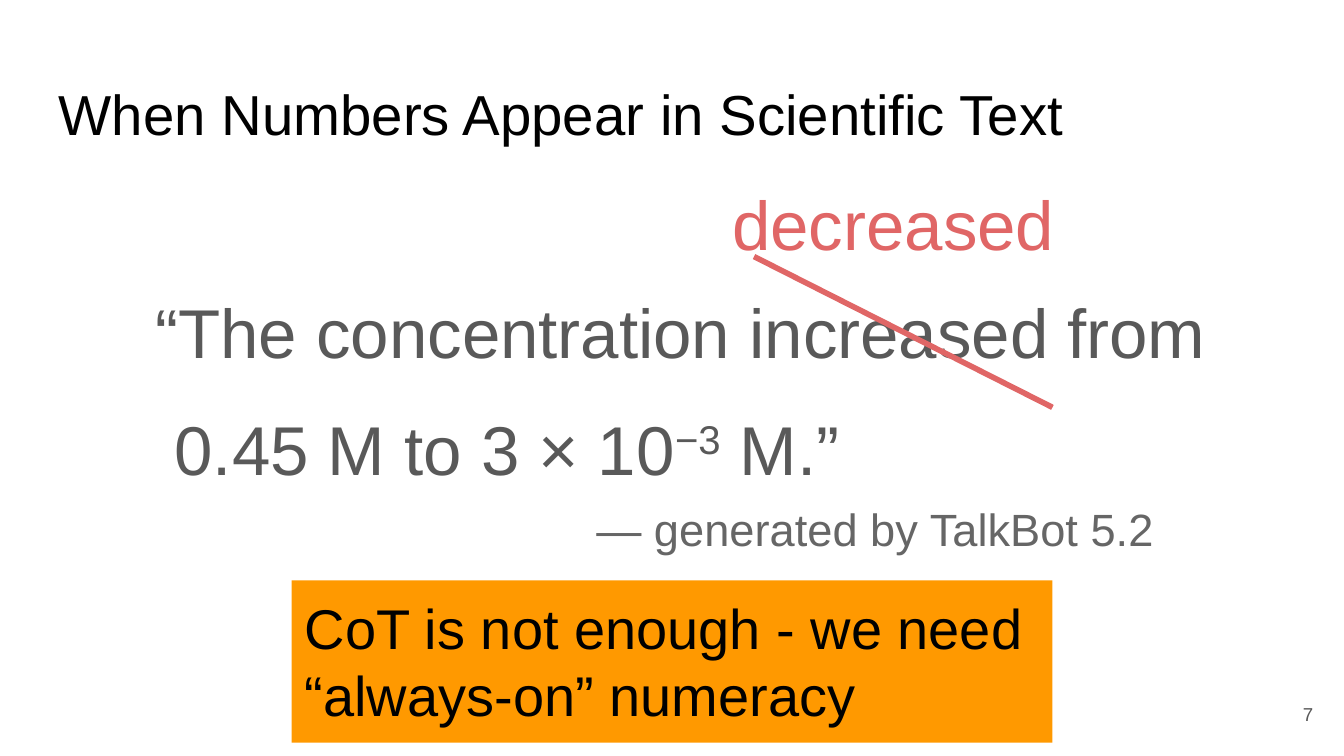
from lxml import etree
from pptx import Presentation
from pptx.dml.color import RGBColor
from pptx.enum import shapes, text
from pptx.oxml import ns
from pptx.util import Cm, Pt

FONT = "Arial"
GREY = "595959"
RED = "E06666"
BLACK = "000000"
MARGIN = Cm(0.25)


def colour(value):
    return RGBColor.from_string(value)


def format_run(run, size, ink):
    run.font.name = FONT
    run.font.size = Pt(size)
    run.font.color.rgb = colour(ink)


def fill_frame(frame, lines, size, ink, spacing=1.0,
               align=text.PP_ALIGN.LEFT, anchor=text.MSO_ANCHOR.TOP):
    frame.word_wrap = True
    frame.vertical_anchor = anchor
    frame.margin_left = frame.margin_right = MARGIN
    frame.margin_top = frame.margin_bottom = MARGIN
    frame.text = "\n".join(lines)
    for paragraph in frame.paragraphs:
        paragraph.alignment = align
        paragraph.line_spacing = spacing
        for run in paragraph.runs:
            format_run(run, size, ink)


def add_text(slide, box, lines, size, ink, **layout):
    frame = slide.shapes.add_textbox(*map(Cm, box)).text_frame
    fill_frame(frame, lines, size, ink, **layout)
    return frame


def add_banner(slide, box, lines, size, fill, ink):
    banner = slide.shapes.add_shape(shapes.MSO_SHAPE.RECTANGLE, *map(Cm, box))
    banner.shadow.inherit = False
    banner.fill.solid()
    banner.fill.fore_color.rgb = colour(fill)
    banner.line.fill.background()
    fill_frame(banner.text_frame, lines, size, ink)


def add_strike(slide, ends, ink, width):
    strike = slide.shapes.add_connector(
        shapes.MSO_CONNECTOR.STRAIGHT, *map(Cm, ends))
    strike.line.color.rgb = colour(ink)
    strike.line.width = Pt(width)
    etree.SubElement(strike._element.spPr, ns.qn("a:effectLst"))


def add_quote(slide):
    quote = add_text(slide, (2.69, 4.98, 20.85, 5),
                     ["“The concentration increased from", "0.45 M to 3 × 10"],
                     37, GREY, spacing=1.15)
    values = quote.paragraphs[1]
    values.space_before = values.space_after = Pt(12)
    values._p.get_or_add_pPr().set("marL", str(Cm(0.36)))
    for part, baseline in (("−3", 30000), (" M.”", 0)):
        run = values.add_run()
        run.text = part
        format_run(run, 37, GREY)
        run.font._element.set("baseline", str(baseline))


def main():
    deck = Presentation()
    deck.slide_width, deck.slide_height = Cm(25.4), Cm(14.29)
    slide = deck.slides.add_slide(deck.slide_layouts[6])

    add_quote(slide)
    add_strike(slide, (14.25, 4.85, 19.89, 7.7), RED, 3)
    add_text(slide, (13.59, 2.95, 6.96, 2.29), ["decreased"], 37, RED,
             spacing=1.15)
    add_text(slide, (23.55, 12.95, 1.52, 1.09), ["7"], 10, GREY,
             align=text.PP_ALIGN.RIGHT, anchor=text.MSO_ANCHOR.MIDDLE)
    add_text(slide, (0.86, 1.24, 23.67, 1.6),
             ["When Numbers Appear in Scientific Text"], 30.2, BLACK)
    add_text(slide, (11.02, 9.22, 12.07, 1.55),
             ["— generated by TalkBot 5.2"], 24.2, "666666")
    add_banner(slide, (5.51, 10.97, 14.38, 3.07),
               ["CoT is not enough - we need", "“always-on” numeracy"],
               30, "FF9900", BLACK)

    deck.save("out.pptx")


if __name__ == "__main__":
    main()
